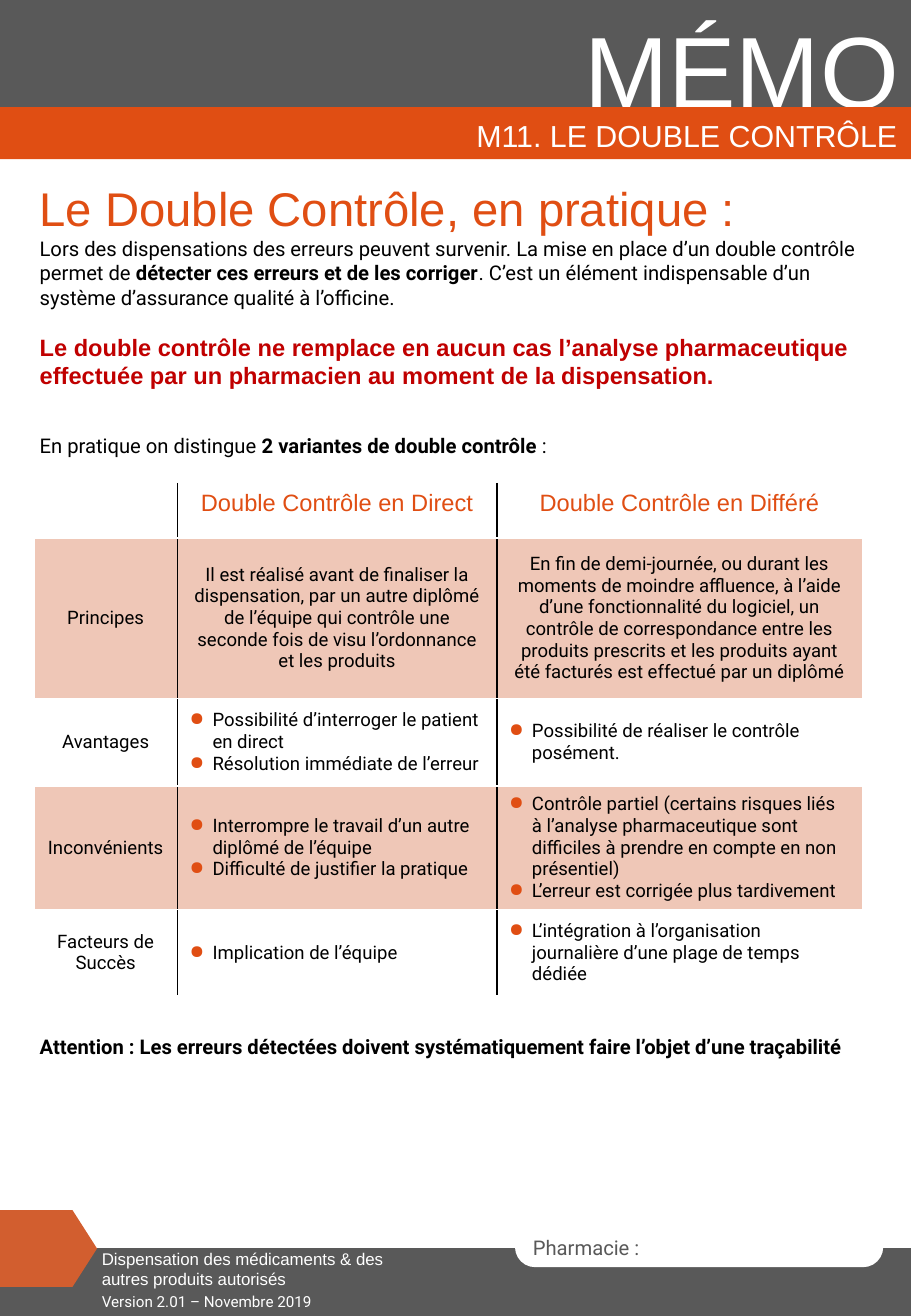
from dataclasses import dataclass

from lxml import etree
from pptx import Presentation
from pptx import util as u
from pptx.dml.color import RGBColor
from pptx.enum import shapes, text
from pptx.oxml import ns

GREY = RGBColor(0x59, 0x59, 0x59)
ORANGE = RGBColor(0xE0, 0x4E, 0x13)
RUST = RGBColor(0xD2, 0x5E, 0x2F)
PEACH = RGBColor(0xEF, 0xC7, 0xB7)
RED = RGBColor(0xC0, 0x00, 0x00)
BLACK = RGBColor(0x00, 0x00, 0x00)
WHITE = RGBColor(0xFF, 0xFF, 0xFF)

LEFT, CENTER, RIGHT = text.PP_ALIGN.LEFT, text.PP_ALIGN.CENTER, text.PP_ALIGN.RIGHT
TOP, MIDDLE = text.MSO_ANCHOR.TOP, text.MSO_ANCHOR.MIDDLE


@dataclass(frozen=True)
class Style:
    font: str
    size: float
    color: RGBColor


@dataclass(frozen=True)
class Run:
    text: str
    bold: bool = False


@dataclass(frozen=True)
class Para:
    runs: tuple[Run, ...]
    style: Style
    align: text.PP_ALIGN = LEFT
    before: float = 0
    after: float = 0
    line_spacing: float = 1.0
    bullet: bool = False


@dataclass(frozen=True)
class Area:
    """Left, top, width and height in centimetres."""
    left: float
    top: float
    width: float
    height: float

    def lengths(self) -> tuple[u.Cm, ...]:
        return u.Cm(self.left), u.Cm(self.top), u.Cm(self.width), u.Cm(self.height)


@dataclass(frozen=True)
class TextBox:
    area: Area
    paras: tuple[Para, ...]
    anchor: text.MSO_ANCHOR = TOP


BODY = Style("Roboto", 12, BLACK)
CELL = Style("Roboto", 11, BLACK)
HEADER = Style("Arial", 14, ORANGE)

MEMO = TextBox(Area(11.76, 0.03, 7.29, 2.82),
               (Para((Run("MÉMO"),), Style("Arial", 60, WHITE), RIGHT),))
TEXT_BOXES = (
    TextBox(Area(0.58, 2.41, 18.44, 0.94),
            (Para((Run("M11. LE DOUBLE CONTRÔLE"),), Style("Arial", 18, WHITE), RIGHT,
                  line_spacing=0.9),), MIDDLE),
    TextBox(Area(0.58, 3.63, 17.96, 6.88), (
        Para((Run("Le Double Contrôle, en pratique :"),), Style("Arial", 28, ORANGE)),
        Para((Run("Lors des dispensations des erreurs peuvent survenir. La mise en place "
                  "d’un double contrôle permet de "),
              Run("détecter ces erreurs et de les corriger", True),
              Run(". C’est un élément indispensable d’un système d’assurance qualité "
                  "à l’officine.")), BODY),
        Para((Run("Le double contrôle ne remplace en aucun cas l’analyse pharmaceutique "
                  "effectuée par un pharmacien au moment de la dispensation.", True),),
             Style("Arial", 14, RED), before=14, after=6),
        Para((Run("En pratique on distingue "), Run("2 variantes de double contrôle ", True),
              Run(":")), BODY, before=20, after=6),
    )),
    TextBox(Area(0.58, 21.49, 17.96, 0.76),
            (Para((Run("Attention : Les erreurs détectées doivent systématiquement faire "
                       "l’objet d’une traçabilité", True),), BODY, after=6),)),
    TextBox(Area(1.88, 25.98, 6.43, 1.12),
            (Para((Run("Dispensation des médicaments & des autres produits autorisés"),),
                  Style("Arial", 10, WHITE)),)),
    TextBox(Area(1.88, 26.9, 14.94, 0.64),
            (Para((Run("Version 2.01 – Novembre 2019"),), Style("Roboto", 9, WHITE)),)),
)

TABLE_AREA = Area(0.71, 10.11, 17.32, 10.69)
COLUMN_WIDTHS = (3.0, 6.68, 7.64)
ROW_HEIGHTS = (1.14, 3.35, 1.83, 2.57, 1.8)
# A string is a centred text, a tuple is a bulleted list.
TABLE_ROWS = (
    ("", "Double Contrôle en Direct", "Double Contrôle en Différé"),
    ("Principes",
     "Il est réalisé avant de finaliser la dispensation, par un autre diplômé de l’équipe "
     "qui contrôle une seconde fois de visu l’ordonnance et les produits",
     "En fin de demi-journée, ou durant les moments de moindre affluence, à l’aide d’une "
     "fonctionnalité du logiciel, un contrôle de correspondance entre les produits prescrits "
     "et les produits ayant été facturés est effectué par un diplômé"),
    ("Avantages",
     ("Possibilité d’interroger le patient en direct", "Résolution immédiate de l’erreur"),
     ("Possibilité de réaliser le contrôle posément.",)),
    ("Inconvénients",
     ("Interrompre le travail d’un autre diplômé de l’équipe",
      "Difficulté de justifier la pratique"),
     ("Contrôle partiel (certains risques liés à l’analyse pharmaceutique sont difficiles à "
      "prendre en compte en non présentiel)", "L’erreur est corrigée plus tardivement")),
    ("Facteurs de Succès",
     ("Implication de l’équipe",),
     ("L’intégration à l’organisation journalière d’une plage de temps dédiée",)),
)


def add_bullet(paragraph) -> None:
    properties = paragraph._p.get_or_add_pPr()
    properties.set("marL", str(u.Cm(0.48)))
    properties.set("indent", str(-u.Cm(0.48)))
    color = etree.SubElement(properties, ns.qn("a:buClr"))
    etree.SubElement(color, ns.qn("a:srgbClr"), val=str(ORANGE))
    etree.SubElement(properties, ns.qn("a:buChar"), char="●")


def write(frame, paras: tuple[Para, ...]) -> None:
    for index, para in enumerate(paras):
        paragraph = frame.add_paragraph() if index else frame.paragraphs[0]
        if para.bullet:
            add_bullet(paragraph)
        paragraph.alignment = para.align
        paragraph.line_spacing = para.line_spacing
        paragraph.space_before = u.Pt(para.before)
        paragraph.space_after = u.Pt(para.after)
        for part in para.runs:
            run = paragraph.add_run()
            run.text = part.text
            run.font.name = para.style.font
            run.font.size = u.Pt(para.style.size)
            run.font.color.rgb = para.style.color
            run.font.bold = part.bold


def add_text_box(slide, box: TextBox) -> None:
    frame = slide.shapes.add_textbox(*box.area.lengths()).text_frame
    frame.word_wrap = True
    frame.vertical_anchor = box.anchor
    write(frame, box.paras)


def add_block(slide, kind: shapes.MSO_SHAPE, area: Area, color: RGBColor):
    shape = slide.shapes.add_shape(kind, *area.lengths())
    shape.shadow.inherit = False
    shape.fill.solid()
    shape.fill.fore_color.rgb = color
    shape.line.fill.background()
    return shape


def add_side_border(cell, position: int, tag: str) -> None:
    line = etree.Element(ns.qn(tag), w=str(u.Pt(1)))
    fill = etree.SubElement(line, ns.qn("a:solidFill"))
    etree.SubElement(fill, ns.qn("a:srgbClr"), val=str(BLACK))
    cell._tc.get_or_add_tcPr().insert(position, line)


def fill_cell(cell, content: str | tuple[str, ...], row: int, column: int) -> None:
    cell.vertical_anchor = MIDDLE if row else TOP
    if row % 2:
        cell.fill.solid()
        cell.fill.fore_color.rgb = PEACH
    else:
        cell.fill.background()
    borders = ["a:lnL"] * (column > 0) + ["a:lnR"] * (column < len(COLUMN_WIDTHS) - 1)
    for position, tag in enumerate(borders):
        add_side_border(cell, position, tag)
    if isinstance(content, tuple):
        write(cell.text_frame, tuple(Para((Run(item),), CELL, bullet=True) for item in content))
    elif content:
        write(cell.text_frame, (Para((Run(content),), CELL if row else HEADER, CENTER),))


def add_comparison_table(slide) -> None:
    table = slide.shapes.add_table(len(ROW_HEIGHTS), len(COLUMN_WIDTHS),
                                   *TABLE_AREA.lengths()).table
    table.first_row = table.horz_banding = False
    for column, width in zip(table.columns, COLUMN_WIDTHS):
        column.width = u.Cm(width)
    for row, (height, contents) in enumerate(zip(ROW_HEIGHTS, TABLE_ROWS)):
        table.rows[row].height = u.Cm(height)
        for column, content in enumerate(contents):
            fill_cell(table.cell(row, column), content, row, column)


def main() -> None:
    presentation = Presentation()
    presentation.slide_width, presentation.slide_height = u.Cm(19.05), u.Cm(27.51)
    slide = presentation.slides.add_slide(presentation.slide_layouts[6])

    kinds = shapes.MSO_SHAPE
    add_block(slide, kinds.RECTANGLE, Area(0, 0, 19.05, 2.24), GREY)
    add_text_box(slide, MEMO)
    add_block(slide, kinds.RECTANGLE, Area(0, 2.24, 19.05, 1.09), ORANGE)
    add_block(slide, kinds.RECTANGLE, Area(0, 26.09, 19.05, 1.42), GREY)
    pharmacy = add_block(slide, kinds.ROUNDED_RECTANGLE, Area(10.77, 25.65, 7.7, 0.84), WHITE)
    pharmacy.adjustments[0] = 0.5
    pharmacy.text_frame.vertical_anchor = MIDDLE
    write(pharmacy.text_frame, (Para((Run("Pharmacie :"),), Style("Roboto", 12, GREY)),))
    arrow = add_block(slide, kinds.PENTAGON, Area(0, 25.3, 2.03, 1.6), RUST)
    arrow.adjustments[0] = 0.32

    for box in TEXT_BOXES:
        add_text_box(slide, box)
    add_comparison_table(slide)
    presentation.save("out.pptx")


if __name__ == "__main__":
    main()
